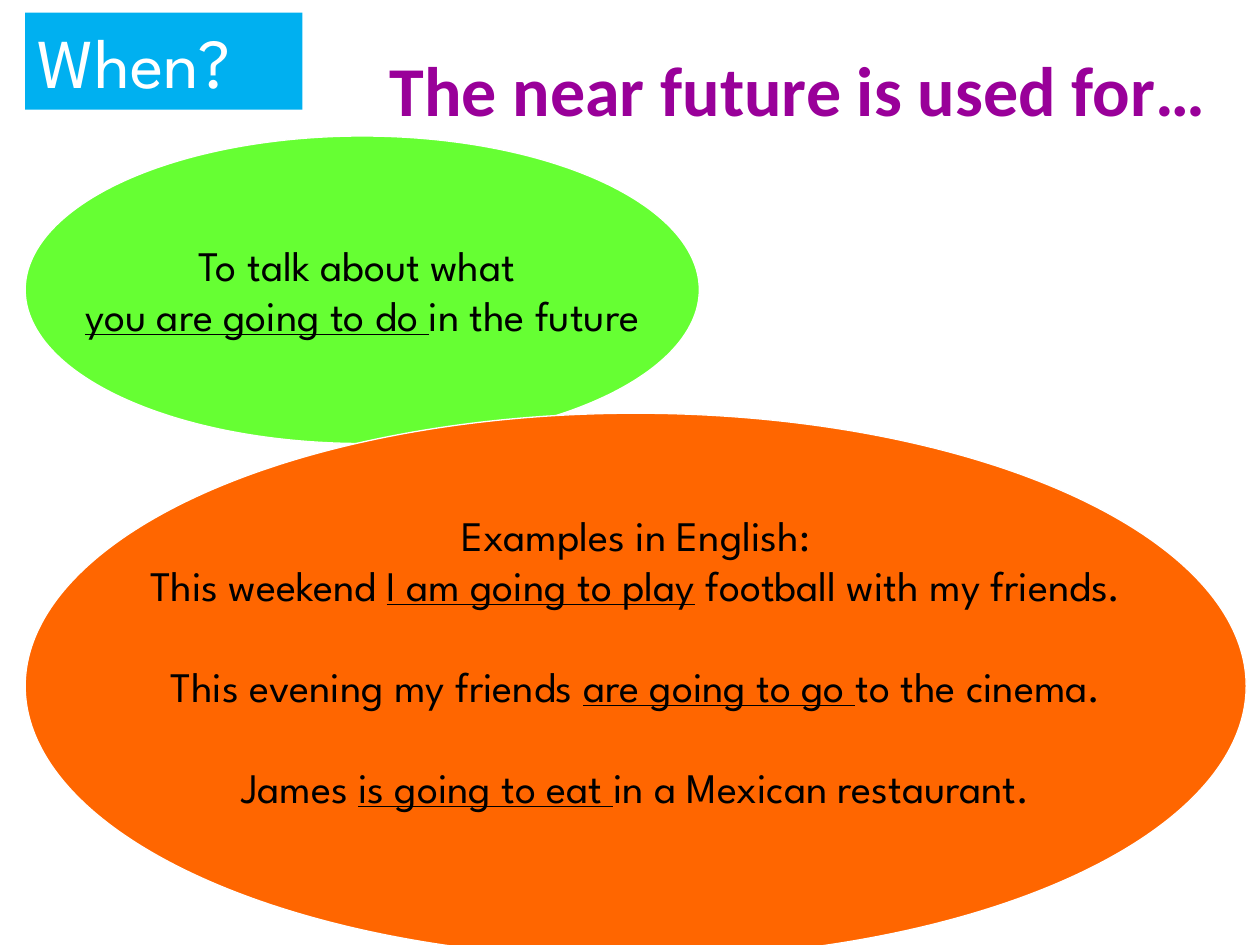
from pptx import Presentation
from pptx.dml.color import RGBColor
from pptx.enum.shapes import MSO_SHAPE
from pptx.enum.text import MSO_ANCHOR, PP_ALIGN
from pptx.util import Inches, Pt

BODY = {"name": "League Spartan", "size": Pt(24)}
LABEL = {"name": "League Spartan", "size": Pt(40)}
TITLE = {"name": "Calibri", "size": Pt(40), "bold": True}
CENTERED = {"alignment": PP_ALIGN.CENTER}
SPACED = {"alignment": PP_ALIGN.CENTER, "space_before": Pt(29)}

PURPOSE = [
    (CENTERED, ["To talk about what "]),
    (CENTERED, ["", "you are going to do ", "in the future"]),
]
EXAMPLES = [
    (CENTERED, ["Examples in English:"]),
    (CENTERED, ["This weekend ", "I am going to play", " football with my friends."]),
    (SPACED, ["This evening my friends ", "are going to go ", "to the cinema."]),
    (SPACED, ["James ", "is going to eat ", "in a Mexican restaurant."]),
]


def color(value):
    return RGBColor.from_string(value)


def apply_format(target, values):
    for name, value in values.items():
        setattr(target, name, value)


def write_paragraphs(frame, paragraphs, font, font_color):
    for index, (layout, pieces) in enumerate(paragraphs):
        para = frame.add_paragraph() if index else frame.paragraphs[0]
        apply_format(para, layout)
        for position, text in enumerate(pieces):
            if text:
                span = para.add_run()
                span.text = text
                apply_format(span.font, {**font, "underline": position == 1})
                span.font.color.rgb = color(font_color)


def add_title(page, text):
    title = page.shapes.title
    apply_format(title, {"left": Inches(2.24), "top": Inches(0.08),
                         "width": Inches(8.18), "height": Inches(1.25)})
    title.text_frame.vertical_anchor = MSO_ANCHOR.MIDDLE
    write_paragraphs(title.text_frame, [(CENTERED, [text])], TITLE, "990099")


def add_panel(page, kind, bounds, fill, frame_format, line=None):
    panel = page.shapes.add_shape(kind, *map(Inches, bounds))
    panel.shadow.inherit = False
    panel.fill.solid()
    panel.fill.fore_color.rgb = color(fill)
    if line:
        panel.line.color.rgb = color(line)
        panel.line.width = Pt(0.75)
    else:
        panel.line.fill.background()
    apply_format(panel.text_frame, frame_format)
    return panel.text_frame


def add_bubble(page, bounds, fill, paragraphs, bottom_inset=0.05):
    frame_format = {"word_wrap": False, "vertical_anchor": MSO_ANCHOR.MIDDLE,
                    "margin_bottom": Inches(bottom_inset)}
    frame = add_panel(page, MSO_SHAPE.OVAL, bounds, fill, frame_format, "FFFFFF")
    write_paragraphs(frame, paragraphs, BODY, "000000")


def add_label(page, bounds, fill, text):
    frame_format = {"word_wrap": True, "vertical_anchor": MSO_ANCHOR.TOP}
    frame = add_panel(page, MSO_SHAPE.RECTANGLE, bounds, fill, frame_format)
    write_paragraphs(frame, [({"alignment": PP_ALIGN.LEFT}, [text])], LABEL, "FFFFFF")


def main():
    deck = Presentation()
    apply_format(deck, {"slide_width": Inches(10), "slide_height": Inches(7.5)})
    page = deck.slides.add_slide(deck.slide_layouts[5])
    add_title(page, "The near future is used for…")
    add_bubble(page, (0.2, 1.08, 5.35, 2.44), "66FF33", PURPOSE)
    add_bubble(page, (0.2, 3.28, 9.69, 4.33), "FF6600", EXAMPLES, 0.45)
    add_label(page, (0.2, 0.1, 2.2, 0.77), "00B0F0", "When?")
    deck.save("out.pptx")


if __name__ == "__main__":
    main()
